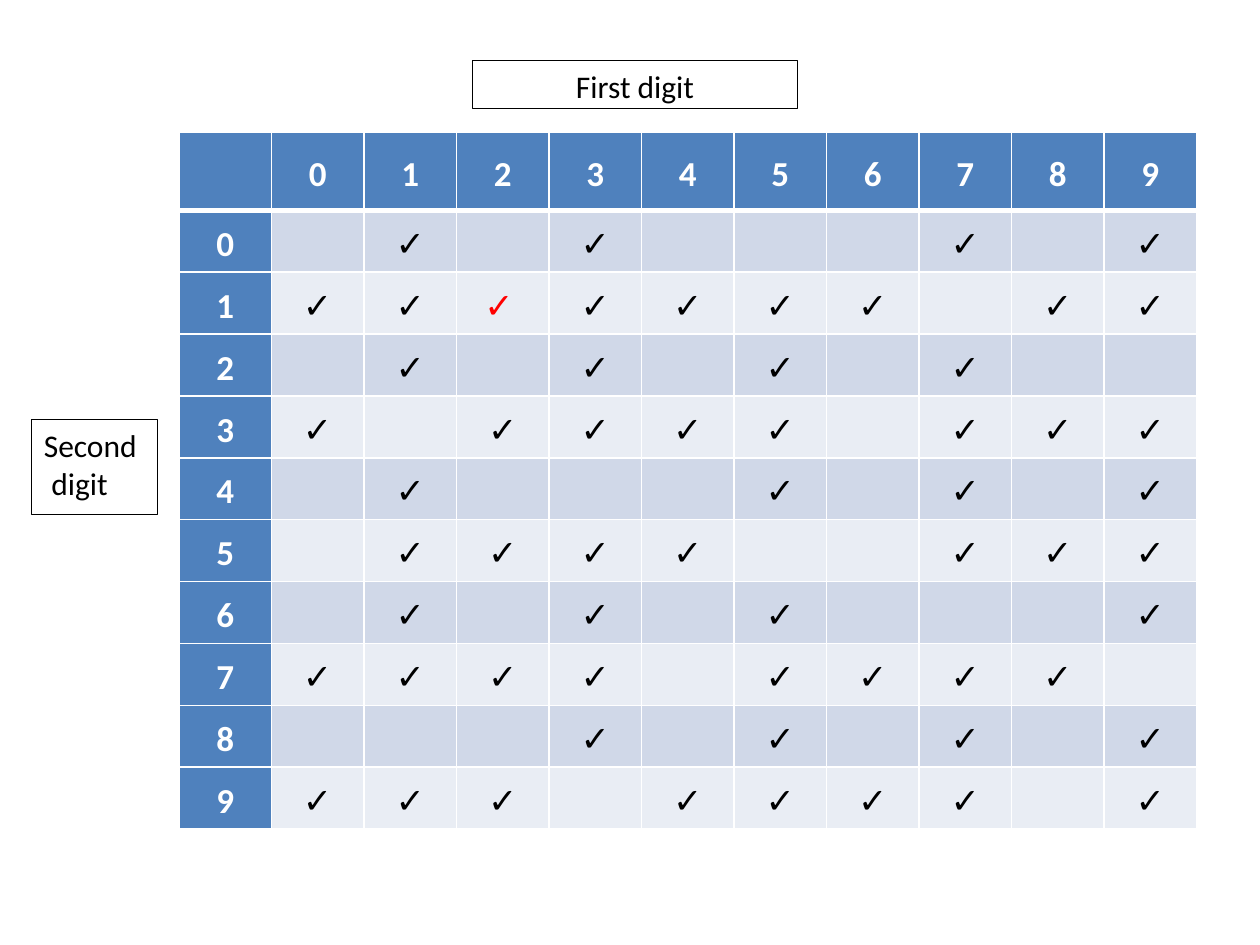
from lxml.etree import SubElement
from pptx import Presentation
from pptx.dml.color import RGBColor
from pptx.enum.shapes import MSO_SHAPE
from pptx.enum.text import MSO_ANCHOR, PP_ALIGN
from pptx.oxml.ns import qn
from pptx.util import Inches, Pt

COLORS = {"header": "4F81BD", "even": "D0D8E8", "odd": "E9EDF4",
          "white": "FFFFFF", "black": "000000", "red": "FF0000"}

# First digits ticked for each second digit 0-9
TICKS = ["1379", "012345689", "1357", "02345789", "1579",
         "1234789", "1359", "01235678", "3579", "01245679"]
RED_TICK = (1, 2)  # second digit, first digit
LABELS = [  # lines, (left, top, width, height), alignment
    (["First digit"], (3.75, 0.48, 2.58, 0.38), PP_ALIGN.CENTER),
    (["Second", "digit"], (0.25, 3.33, 1, 0.75), PP_ALIGN.LEFT),
]
LEFT, TOP, WIDTH, HEIGHT = 1.42, 1.05, 8.08, 5.53
HEADER_HEIGHT = 0.62


def rgb(name):
    return RGBColor.from_string(COLORS[name])


def write(p, text, size=18, color="black", bold=False, align=PP_ALIGN.CENTER, spacing=None):
    p.alignment = align
    p.line_spacing = spacing
    r = p.add_run()
    r.text = text
    r.font.name = "Calibri"
    r.font.size = Pt(size)
    r.font.bold = bold
    r.font.color.rgb = rgb(color)


def style_cell(cell, fill, top=1, bottom=1):
    tcPr = cell._tc.get_or_add_tcPr()
    for side, width in (("L", 1), ("R", 1), ("T", top), ("B", bottom)):
        ln = SubElement(tcPr, qn(f"a:ln{side}"), w=str(Pt(width)))
        solid = SubElement(ln, qn("a:solidFill"))
        SubElement(solid, qn("a:srgbClr"), val=COLORS["white"])
    cell.fill.solid()
    cell.fill.fore_color.rgb = rgb(fill)
    cell.vertical_anchor = MSO_ANCHOR.MIDDLE
    cell.margin_left = cell.margin_right = Inches(0.04)
    cell.margin_top = cell.margin_bottom = 0


prs = Presentation()
prs.slide_width, prs.slide_height = Inches(10), Inches(7.5)
s = prs.slides.add_slide(prs.slide_layouts[6])

# Digit table
n = len(TICKS) + 1
table = s.shapes.add_table(n, n, Inches(LEFT), Inches(TOP), Inches(WIDTH), Inches(HEIGHT)).table
for col in table.columns:
    col.width = Inches(WIDTH / n)
for i, row in enumerate(table.rows):
    row.height = Inches((HEIGHT - HEADER_HEIGHT) / (n - 1) if i else HEADER_HEIGHT)
    for j, cell in enumerate(row.cells):
        is_header = i == 0 or j == 0
        fill = "header" if is_header else "odd" if i % 2 == 0 else "even"
        style_cell(cell, fill, top=3 if i == 1 else 1, bottom=3 if i == 0 else 1)
        text, color = "", "black"
        if is_header:
            text, color = str(max(i, j) - 1) if i + j else "", "white"
        elif str(j - 1) in TICKS[i - 1]:
            text = "✓"
            if (i - 1, j - 1) == RED_TICK:
                color = "red"
                cell.margin_right = Inches(0.1)
        if text:
            write(cell.text_frame.paragraphs[0], text, size=20, color=color, bold=True, spacing=1.15)

# Axis labels
for lines, box, align in LABELS:
    sp = s.shapes.add_shape(MSO_SHAPE.RECTANGLE, *map(Inches, box))
    sp.shadow.inherit = False
    sp.fill.solid()
    sp.fill.fore_color.rgb = rgb("white")
    sp.line.color.rgb = rgb("black")
    sp.line.width = Pt(0.5)
    tf = sp.text_frame
    tf.word_wrap = True
    tf.vertical_anchor = MSO_ANCHOR.TOP
    for k, line in enumerate(lines):
        p = tf.add_paragraph() if k else tf.paragraphs[0]
        if k:  # second line is slightly indented
            p._p.get_or_add_pPr().set("marL", str(Inches(0.06)))
        write(p, line, align=align)

prs.save("out.pptx")
